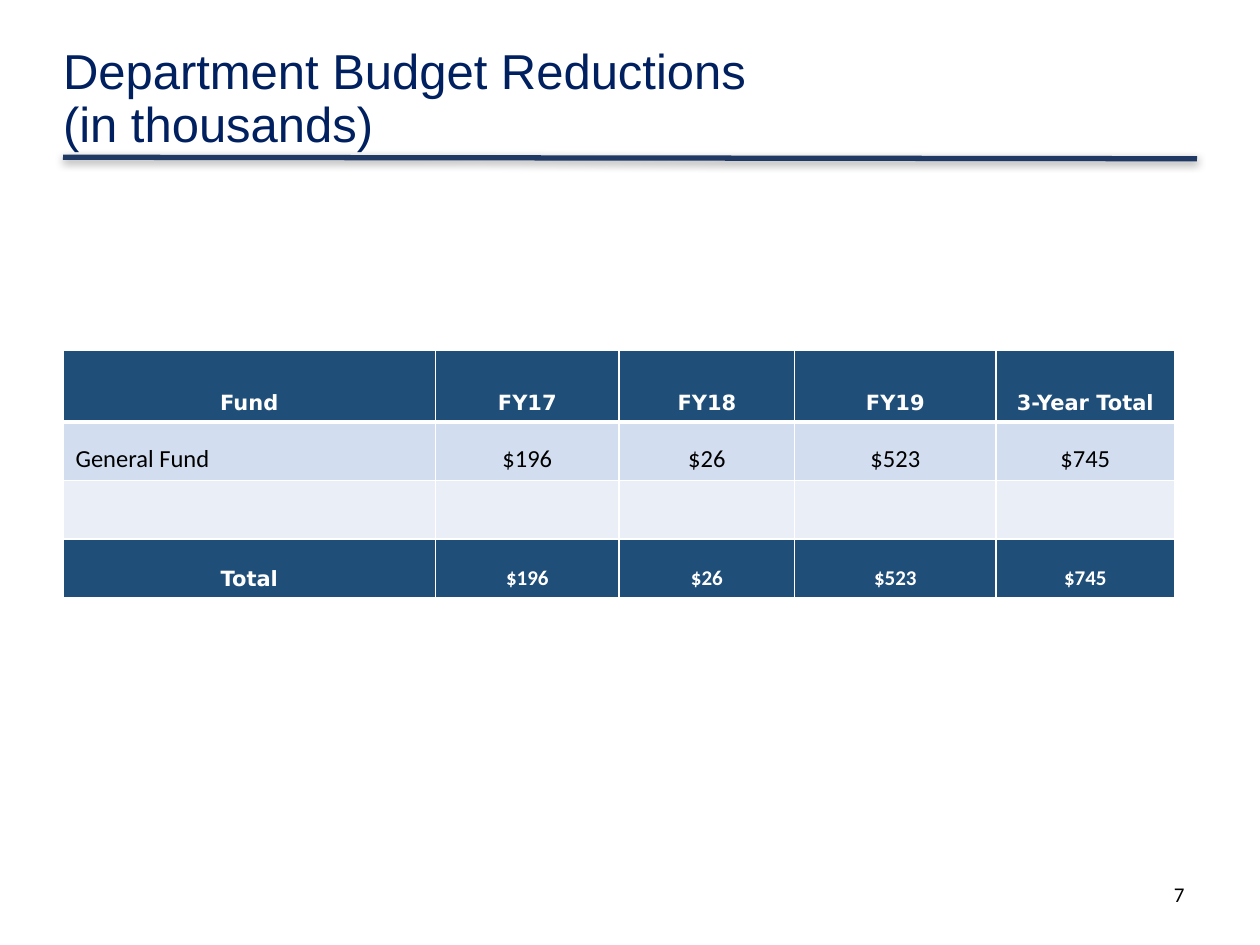
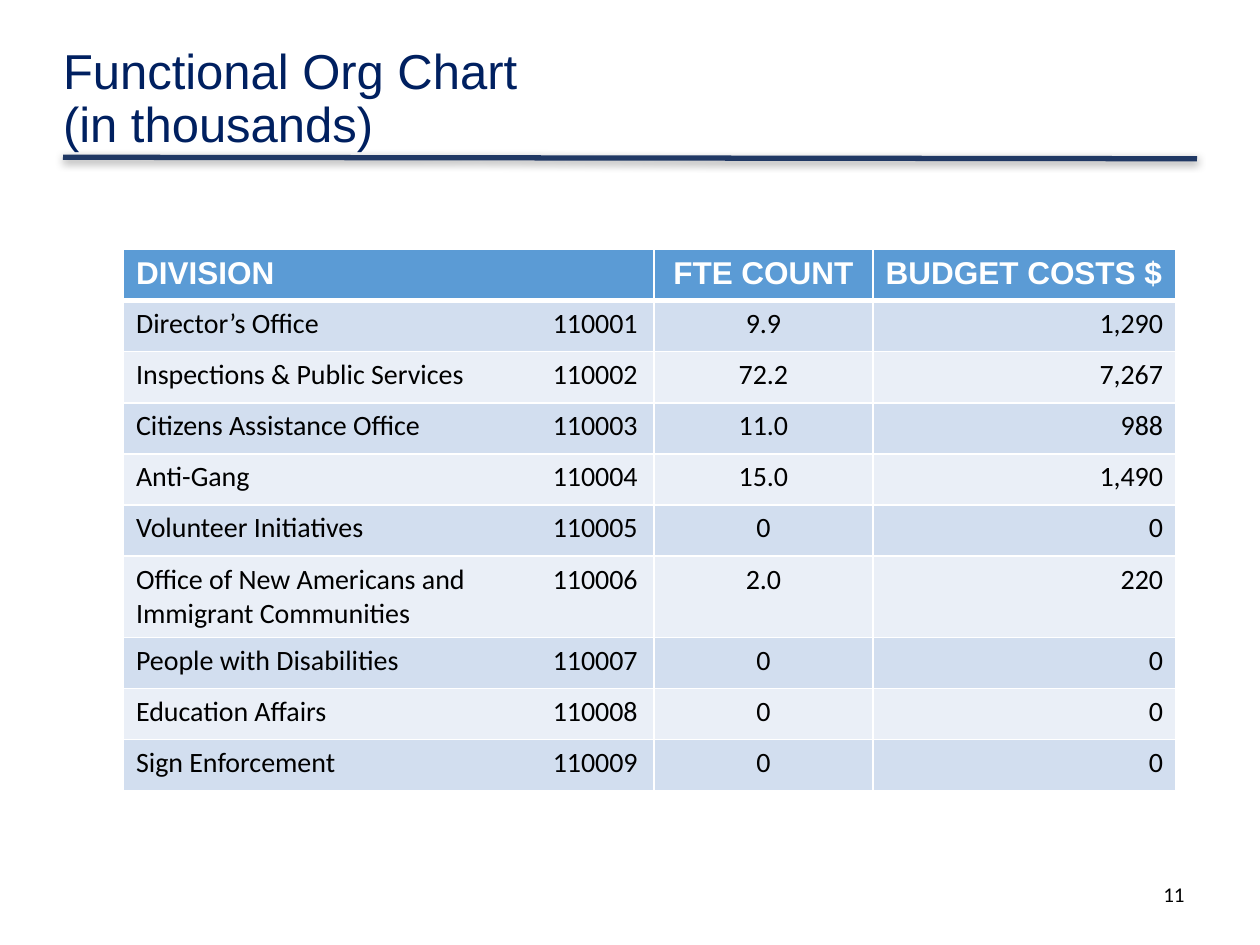
from dataclasses import dataclass

from lxml import etree
from pptx import Presentation
from pptx.dml.color import RGBColor
from pptx.enum.shapes import MSO_CONNECTOR
from pptx.enum.text import MSO_ANCHOR, MSO_AUTO_SIZE, PP_ALIGN
from pptx.oxml import parse_xml
from pptx.oxml.ns import nsdecls, qn
from pptx.util import Cm, Pt

LEFT, CENTER, RIGHT = PP_ALIGN.LEFT, PP_ALIGN.CENTER, PP_ALIGN.RIGHT
TOP, MIDDLE, BOTTOM = MSO_ANCHOR.TOP, MSO_ANCHOR.MIDDLE, MSO_ANCHOR.BOTTOM

COLORS = {
    "title": "002060",
    "rule": "203864",
    "text": "000000",
    "white": "FFFFFF",
    "dark_blue": "1F4E79",
    "blue": "5B9BD5",
    "band_dark": "D2DEEF",
    "band_light": "EAEFF7",
}
TITLE_FONT, BODY_FONT, LABEL_FONT = "Arial", "Calibri", "DejaVu Sans"
TITLE_ONLY_LAYOUT = 5
MARGIN = 1.27
CODE_TAB = 8.4


@dataclass(frozen=True)
class TextStyle:
    font: str
    size: float
    color: str
    bold: bool = False


@dataclass(frozen=True)
class TableRow:
    values: tuple[str, ...]
    height: float
    fill: str
    styles: tuple[TextStyle, ...]
    alignments: tuple[PP_ALIGN, ...]


@dataclass(frozen=True)
class TableSpec:
    left: float
    top: float
    widths: tuple[float, ...]
    rows: tuple[TableRow, ...]
    anchor: MSO_ANCHOR


TITLE = TextStyle(TITLE_FONT, 28, "title")
PAGE_NUMBER = TextStyle(BODY_FONT, 12, "text")
FUND_LABEL = TextStyle(LABEL_FONT, 12, "white", True)
FUND_TOTAL = TextStyle(BODY_FONT, 12, "white", True)
FUND_BODY = TextStyle(BODY_FONT, 14, "text")
DIVISION_HEADER = TextStyle(TITLE_FONT, 18, "white", True)
DIVISION_BODY = TextStyle(BODY_FONT, 16, "text")


def rgb(name: str) -> RGBColor:
    return RGBColor.from_string(COLORS[name])


def write_text(text_frame, text: str, style: TextStyle, alignment=LEFT,
               line_spacing=None) -> None:
    """Fill the first paragraph; line ends become breaks, tabs get a stop."""
    paragraph = text_frame.paragraphs[0]
    paragraph.alignment = alignment
    if line_spacing:
        paragraph.line_spacing = line_spacing
    if "\t" in text:
        properties = paragraph._p.get_or_add_pPr()
        tab_list = etree.SubElement(properties, qn("a:tabLst"))
        etree.SubElement(tab_list, qn("a:tab"), pos=str(Cm(CODE_TAB)), algn="l")
    for index, line in enumerate(text.split("\n")):
        if index:
            paragraph.add_line_break()
        run = paragraph.add_run()
        run.text = line
        run.font.name = style.font
        run.font.size = Pt(style.size)
        run.font.bold = style.bold
        run.font.color.rgb = rgb(style.color)


def set_borders(cell, top: float, bottom: float) -> None:
    properties = cell._tc.get_or_add_tcPr()
    sides = (("L", 1), ("R", 1), ("T", top), ("B", bottom))
    for index, (side, width) in enumerate(sides):
        properties.insert(index, parse_xml(
            f'<a:ln{side} {nsdecls("a")} w="{Pt(width)}"><a:solidFill>'
            f'<a:srgbClr val="{COLORS["white"]}"/></a:solidFill></a:ln{side}>'))


def add_table(slide, spec: TableSpec) -> None:
    frame = slide.shapes.add_table(
        len(spec.rows), len(spec.widths), Cm(spec.left), Cm(spec.top),
        Cm(sum(spec.widths)), Cm(sum(row.height for row in spec.rows)))
    table = frame.table
    for column, width in zip(table.columns, spec.widths):
        column.width = Cm(width)
    for row_index, row in enumerate(spec.rows):
        table.rows[row_index].height = Cm(row.height)
        for column_index, value in enumerate(row.values):
            cell = table.cell(row_index, column_index)
            cell.vertical_anchor = spec.anchor
            cell.fill.solid()
            cell.fill.fore_color.rgb = rgb(row.fill)
            # The heavy line lies between the header and the first body row
            set_borders(cell, top=3 if row_index == 1 else 1,
                        bottom=3 if row_index == 0 else 1)
            if value:
                write_text(cell.text_frame, value, row.styles[column_index],
                           row.alignments[column_index])


def add_title_rule(slide) -> None:
    rule = slide.shapes.add_connector(
        MSO_CONNECTOR.STRAIGHT, Cm(MARGIN), Cm(3.17), Cm(24.13), Cm(3.2))
    rule.line.color.rgb = rgb("rule")
    rule.line.width = Pt(3)
    rule._element.spPr.append(parse_xml(
        f'<a:effectLst {nsdecls("a")}><a:outerShdw blurRad="{Pt(5)}" '
        f'dist="{Pt(1.6)}" dir="5400000" algn="t" rotWithShape="0">'
        f'<a:srgbClr val="{COLORS["text"]}"><a:alpha val="38000"/></a:srgbClr>'
        '</a:outerShdw></a:effectLst>'))


def add_slide(presentation, title: str, page: int):
    """Add a slide with the shared title, rule and page number."""
    slide = presentation.slides.add_slide(
        presentation.slide_layouts[TITLE_ONLY_LAYOUT])
    add_title_rule(slide)

    heading = slide.shapes.title
    heading.left, heading.top = Cm(MARGIN), Cm(0.84)
    heading.width, heading.height = Cm(17.42), Cm(2.34)
    frame = heading.text_frame
    frame.margin_left = frame.margin_right = 0
    frame.margin_top = frame.margin_bottom = 0
    frame.vertical_anchor = MIDDLE
    frame.word_wrap = True
    frame.auto_size = MSO_AUTO_SIZE.NONE
    write_text(frame, title, TITLE, line_spacing=0.9)

    number = slide.shapes.add_textbox(Cm(18.21), Cm(17.65), Cm(5.92), Cm(1.02))
    number.text_frame.word_wrap = True
    write_text(number.text_frame, str(page), PAGE_NUMBER, RIGHT)
    return slide


def budget_reductions_table() -> TableSpec:
    count = 5
    labels = (FUND_LABEL,) * count
    centered = (CENTER,) * count
    body = (FUND_BODY,) * count
    body_alignments = (LEFT,) + (CENTER,) * (count - 1)
    total_styles = (FUND_LABEL,) + (FUND_TOTAL,) * (count - 1)
    amounts = ("$196", "$26", "$523", "$745")
    rows = (
        TableRow(("Fund", "FY17", "FY18", "FY19", "3-Year Total"), 1.44,
                 "dark_blue", labels, centered),
        TableRow(("General Fund",) + amounts, 1.18, "band_dark", body,
                 body_alignments),
        TableRow(("",) * count, 1.18, "band_light", body, body_alignments),
        TableRow(("Total",) + amounts, 1.18, "dark_blue", total_styles, centered),
    )
    return TableSpec(MARGIN, 7.07, (7.51, 3.7, 3.54, 4.06, 3.6), rows, BOTTOM)


def division_table() -> TableSpec:
    divisions = (
        ("Director’s Office", "9.9", "1,290"),
        ("Inspections & Public Services", "72.2", "7,267"),
        ("Citizens Assistance Office", "11.0", "988"),
        ("Anti-Gang", "15.0", "1,490"),
        ("Volunteer Initiatives", "0", "0"),
        ("Office of New Americans and\nImmigrant Communities", "2.0", "220"),
        ("People with Disabilities", "0", "0"),
        ("Education Affairs", "0", "0"),
        ("Sign Enforcement", "0", "0"),
    )
    rows = [TableRow(("DIVISION", "FTE COUNT", "BUDGET COSTS $"), 1.03, "blue",
                     (DIVISION_HEADER,) * 3, (LEFT, CENTER, LEFT))]
    for index, (name, staff, cost) in enumerate(divisions):
        # The code follows the first line of the name
        first, *rest = name.split("\n")
        label = "\n".join([f"{first}\t{110001 + index}", *rest])
        rows.append(TableRow(
            (label, staff, cost), 1.64 if rest else 1.03,
            "band_light" if index % 2 else "band_dark",
            (DIVISION_BODY,) * 3, (LEFT, CENTER, RIGHT)))
    return TableSpec(2.49, 5.03, (10.69, 4.42, 6.1), tuple(rows), TOP)


def main() -> None:
    presentation = Presentation()
    presentation.slide_width, presentation.slide_height = Cm(25.4), Cm(19.05)

    # Budget reductions by fund
    slide = add_slide(presentation,
                      "Department Budget Reductions\n(in thousands)", 7)
    add_table(slide, budget_reductions_table())

    # Staff and costs by division
    slide = add_slide(presentation, "Functional Org Chart\n(in thousands)", 11)
    add_table(slide, division_table())

    presentation.save("out.pptx")


if __name__ == "__main__":
    main()
